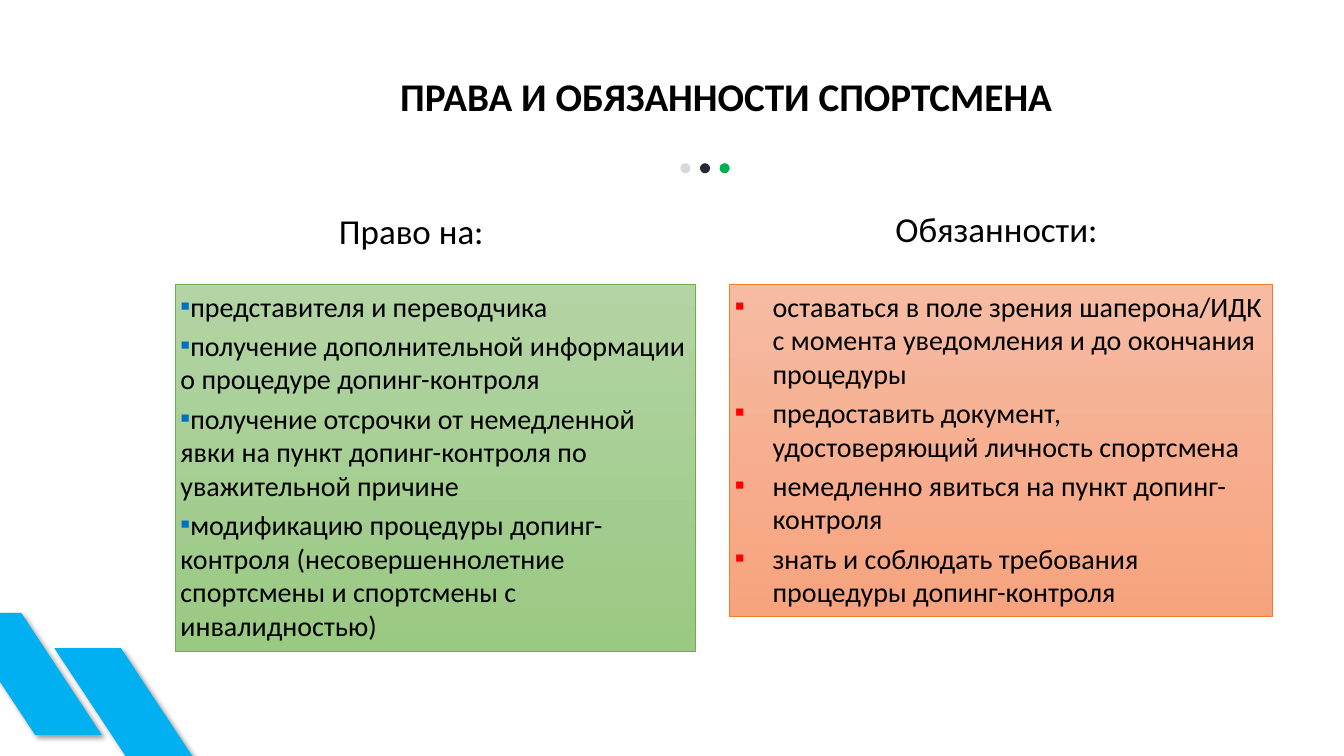
from lxml import etree
from pptx import Presentation
from pptx.dml.color import RGBColor
from pptx.enum.shapes import MSO_SHAPE
from pptx.enum.text import MSO_ANCHOR, MSO_AUTO_SIZE, PP_ALIGN
from pptx.oxml import parse_xml
from pptx.util import Pt

RECT, OVAL, SLANT = MSO_SHAPE.RECTANGLE, MSO_SHAPE.OVAL, MSO_SHAPE.PARALLELOGRAM
TOP, MIDDLE = MSO_ANCHOR.TOP, MSO_ANCHOR.MIDDLE
LEFT, CENTER = PP_ALIGN.LEFT, PP_ALIGN.CENTER
GROW = MSO_AUTO_SIZE.SHAPE_TO_FIT_TEXT

BLACK = RGBColor(0x00, 0x00, 0x00)
SKY = RGBColor(0x00, 0xB0, 0xF0)
BLUE = RGBColor(0x00, 0x70, 0xC0)
RED = RGBColor(0xFF, 0x00, 0x00)
GREY = RGBColor(0xD9, 0xD9, 0xD9)
NAVY = RGBColor(0x22, 0x2A, 0x35)
GREEN = RGBColor(0x00, 0xB0, 0x50)
LEAF = RGBColor(0x70, 0xAD, 0x47)
LEAF_LIGHT = RGBColor(0xB3, 0xD4, 0xA4)
LEAF_MID = RGBColor(0x9A, 0xC9, 0x83)
ORANGE = RGBColor(0xED, 0x7D, 0x31)
ORANGE_LIGHT = RGBColor(0xF6, 0xBB, 0xA2)
ORANGE_MID = RGBColor(0xF7, 0xA3, 0x7E)

NS = "http://schemas.openxmlformats.org/drawingml/2006/main"
SHADOW = (
    f'<a:effectLst xmlns:a="{NS}"><a:outerShdw blurRad="{Pt(4)}" dist="{Pt(3)}" '
    'dir="2700000" algn="tl" rotWithShape="0"><a:srgbClr val="000000">'
    '<a:alpha val="40000"/></a:srgbClr></a:outerShdw></a:effectLst>'
)


def write(sp, lines, size, bold=False, align=LEFT, anchor=TOP):
    tf = sp.text_frame
    frame = {"word_wrap": True, "auto_size": GROW, "vertical_anchor": anchor,
             "margin_left": Pt(3.6), "margin_right": Pt(3.6),
             "margin_top": Pt(3.6), "margin_bottom": Pt(3.6)}
    for name, value in frame.items():
        setattr(tf, name, value)
    for i, line in enumerate(lines):
        p = tf.paragraphs[0] if i == 0 else tf.add_paragraph()
        p.alignment = align
        p.space_before = Pt(4 if i else 0)
        r = p.add_run()
        r.text = line
        for name, value in {"name": "Calibri", "size": Pt(size), "bold": bold}.items():
            setattr(r.font, name, value)
        r.font.color.rgb = BLACK


def add_bullet(p, color, margin, indent):
    pPr = p._p.get_or_add_pPr()
    pPr.set("marL", str(Pt(margin)))
    pPr.set("indent", str(Pt(indent)))
    clr = etree.SubElement(pPr, f"{{{NS}}}buClr")
    etree.SubElement(clr, f"{{{NS}}}srgbClr", val=str(color))
    etree.SubElement(pPr, f"{{{NS}}}buFont", typeface="Calibri")
    etree.SubElement(pPr, f"{{{NS}}}buChar", char="▪")


prs = Presentation()
prs.slide_width, prs.slide_height = Pt(960), Pt(540)
s = prs.slides.add_slide(prs.slide_layouts[5])

title = s.shapes.title
title.left, title.top, title.width, title.height = Pt(282.2), Pt(48.2), Pt(474.5), Pt(35.3)
write(title, ["ПРАВА И ОБЯЗАННОСТИ СПОРТСМЕНА"], 28, bold=True)

for x, y in ((38.9, 463), (-32.4, 437.8)):
    sp = s.shapes.add_shape(SLANT, Pt(x), Pt(y), Pt(105.1), Pt(87.1))
    sp.adjustments[0] = 0.66
    sp.fill.solid()
    sp.fill.fore_color.rgb = SKY
    sp.line.fill.background()
    spPr = sp._element.spPr
    spPr.xfrm.set("flipH", "1")
    spPr.append(parse_xml(SHADOW))

columns = [
    ("Право на:", (218.2, 148.3, 151.2), (125.3, 371.5, 262.1),
     (LEAF_LIGHT, LEAF_MID, LEAF), (BLUE, 0, -10),
     ["представителя и переводчика",
      "получение дополнительной информации о процедуре допинг-контроля",
      "получение отсрочки от немедленной явки на пункт допинг-контроля по уважительной причине",
      "модификацию процедуры допинг-контроля (несовершеннолетние спортсмены и спортсмены с инвалидностью)"]),
    ("Обязанности:", (625.7, 146.9, 172.1), (521.3, 387.4, 237.6),
     (ORANGE_LIGHT, ORANGE_MID, ORANGE), (RED, 27, -27),
     ["оставаться в поле зрения шаперона/ИДК с момента уведомления и до окончания процедуры",
      "предоставить документ, удостоверяющий личность спортсмена",
      "немедленно явиться на пункт допинг-контроля",
      "знать и соблюдать требования процедуры допинг-контроля"]),
]
for heading, (hx, hy, hw), (x, w, h), (light, mid, edge), bullet, items in columns:
    sp = s.shapes.add_shape(RECT, Pt(x), Pt(203), Pt(w), Pt(h))
    sp.shadow.inherit = False
    sp.fill.gradient()
    sp.fill.gradient_angle = 270
    for stop, color in zip(sp.fill.gradient_stops, (light, mid)):
        stop.color.rgb = color
    sp.line.color.rgb = edge
    sp.line.width = Pt(0.75)
    write(sp, items, 20)
    for p in sp.text_frame.paragraphs:
        add_bullet(p, *bullet)
    sp = s.shapes.add_textbox(Pt(hx), Pt(hy), Pt(hw), Pt(32.4))
    write(sp, [heading], 25, align=CENTER, anchor=MIDDLE)

for i, color in enumerate((GREY, NAVY, GREEN)):
    sp = s.shapes.add_shape(OVAL, Pt(486 + 14 * i), Pt(116.6), Pt(7.2), Pt(7.2))
    sp.shadow.inherit = False
    sp.fill.solid()
    sp.fill.fore_color.rgb = color
    sp.line.fill.background()

prs.save("out.pptx")
